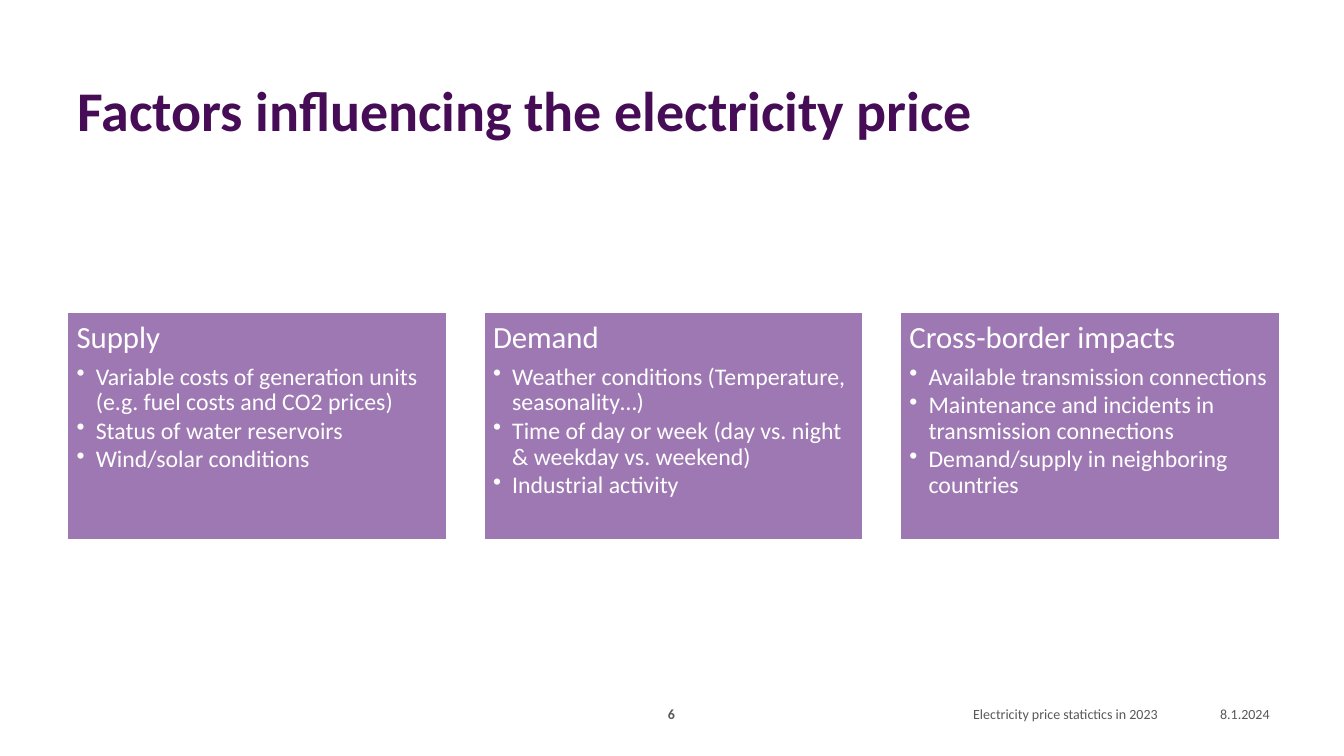
from dataclasses import dataclass

from lxml.etree import SubElement
from pptx import Presentation
from pptx.dml.color import RGBColor
from pptx.enum.shapes import MSO_SHAPE
from pptx.enum.text import MSO_ANCHOR, PP_ALIGN
from pptx.oxml.ns import qn
from pptx.slide import Slide
from pptx.text.text import _Paragraph
from pptx.util import Inches, Pt

FONT = "Calibri"
PURPLE, LILAC, WHITE, GREY = "460D56", "9E78B2", "FFFFFF", "595959"
CARD_LEFT, CARD_TOP, CARD_WIDTH, CARD_HEIGHT = 0.67, 3.1, 3.76, 2.25
CARD_PITCH = 4.13
CARD_INSET = 0.09
BULLET_INDENT = 0.19
FOOTER_TOP, FOOTER_HEIGHT = 6.95, 0.27


@dataclass
class Label:
    text: str
    left: float
    top: float
    width: float
    height: float
    size: float
    color: str
    bold: bool = False
    align: PP_ALIGN = PP_ALIGN.LEFT
    line_spacing: float = 1.0


@dataclass
class Card:
    heading: str
    factors: list[str]


LABELS = [
    Label("Factors influencing the electricity price", 0.67, 0.4, 10.37, 1.45,
          40, PURPLE, bold=True, line_spacing=0.9),
    Label("8.1.2024", 11.58, FOOTER_TOP, 1.11, FOOTER_HEIGHT,
          10, GREY, align=PP_ALIGN.RIGHT),
    Label("Electricity price statictics in 2023", 7.41, FOOTER_TOP, 4.17, FOOTER_HEIGHT,
          10, GREY, align=PP_ALIGN.RIGHT),
    Label("6", 6.36, FOOTER_TOP, 0.6, FOOTER_HEIGHT,
          10, GREY, bold=True, align=PP_ALIGN.CENTER),
]

CARDS = [
    Card("Supply", [
        "Variable costs of generation units (e.g. fuel costs and CO2 prices)",
        "Status of water reservoirs",
        "Wind/solar conditions",
    ]),
    Card("Demand", [
        "Weather conditions (Temperature, seasonality…)",
        "Time of day or week (day vs. night & weekday vs. weekend)",
        "Industrial activity",
    ]),
    Card("Cross-border impacts", [
        "Available transmission connections",
        "Maintenance and incidents in transmission connections",
        "Demand/supply in neighboring countries",
    ]),
]


def rgb(color: str) -> RGBColor:
    return RGBColor.from_string(color)


def add_run(p: _Paragraph, text: str, size: float, color: str, bold: bool = False) -> None:
    r = p.add_run()
    r.text = text
    r.font.name = FONT
    r.font.size = Pt(size)
    r.font.bold = bold
    r.font.color.rgb = rgb(color)


def set_bullet(p: _Paragraph) -> None:
    """Give the paragraph a round bullet and a hanging indent."""
    pPr = p._p.get_or_add_pPr()
    pPr.set("marL", str(Inches(BULLET_INDENT)))
    pPr.set("indent", str(-Inches(BULLET_INDENT)))
    SubElement(pPr, qn("a:buChar")).set("char", "•")


def add_label(s: Slide, label: Label) -> None:
    sp = s.shapes.add_textbox(Inches(label.left), Inches(label.top),
                              Inches(label.width), Inches(label.height))
    tf = sp.text_frame
    tf.word_wrap = True
    tf.vertical_anchor = MSO_ANCHOR.MIDDLE
    p = tf.paragraphs[0]
    p.alignment = label.align
    p.line_spacing = label.line_spacing
    add_run(p, label.text, label.size, label.color, label.bold)


def add_card(s: Slide, card: Card, left: float) -> None:
    sp = s.shapes.add_shape(MSO_SHAPE.RECTANGLE, Inches(left), Inches(CARD_TOP),
                            Inches(CARD_WIDTH), Inches(CARD_HEIGHT))
    sp.shadow.inherit = False
    sp.fill.solid()
    sp.fill.fore_color.rgb = rgb(LILAC)
    sp.line.color.rgb = rgb(WHITE)
    sp.line.width = Pt(1)

    tf = sp.text_frame
    tf.word_wrap = True
    tf.vertical_anchor = MSO_ANCHOR.TOP
    tf.margin_left = tf.margin_right = Inches(CARD_INSET)
    tf.margin_top = tf.margin_bottom = Inches(CARD_INSET)

    p = tf.paragraphs[0]
    p.alignment = PP_ALIGN.LEFT
    p.line_spacing = 0.9
    p.space_after = Pt(7)
    add_run(p, card.heading, 22, WHITE)
    for factor in card.factors:
        p = tf.add_paragraph()
        p.alignment = PP_ALIGN.LEFT
        p.line_spacing = 0.9
        p.space_after = Pt(2)
        set_bullet(p)
        add_run(p, factor, 17, WHITE)


def main() -> None:
    prs = Presentation()
    prs.slide_width, prs.slide_height = Inches(13.33), Inches(7.5)
    s = prs.slides.add_slide(prs.slide_layouts[6])
    for i, card in enumerate(CARDS):
        add_card(s, card, CARD_LEFT + i * CARD_PITCH)
    for label in LABELS:
        add_label(s, label)
    prs.save("out.pptx")


if __name__ == "__main__":
    main()
